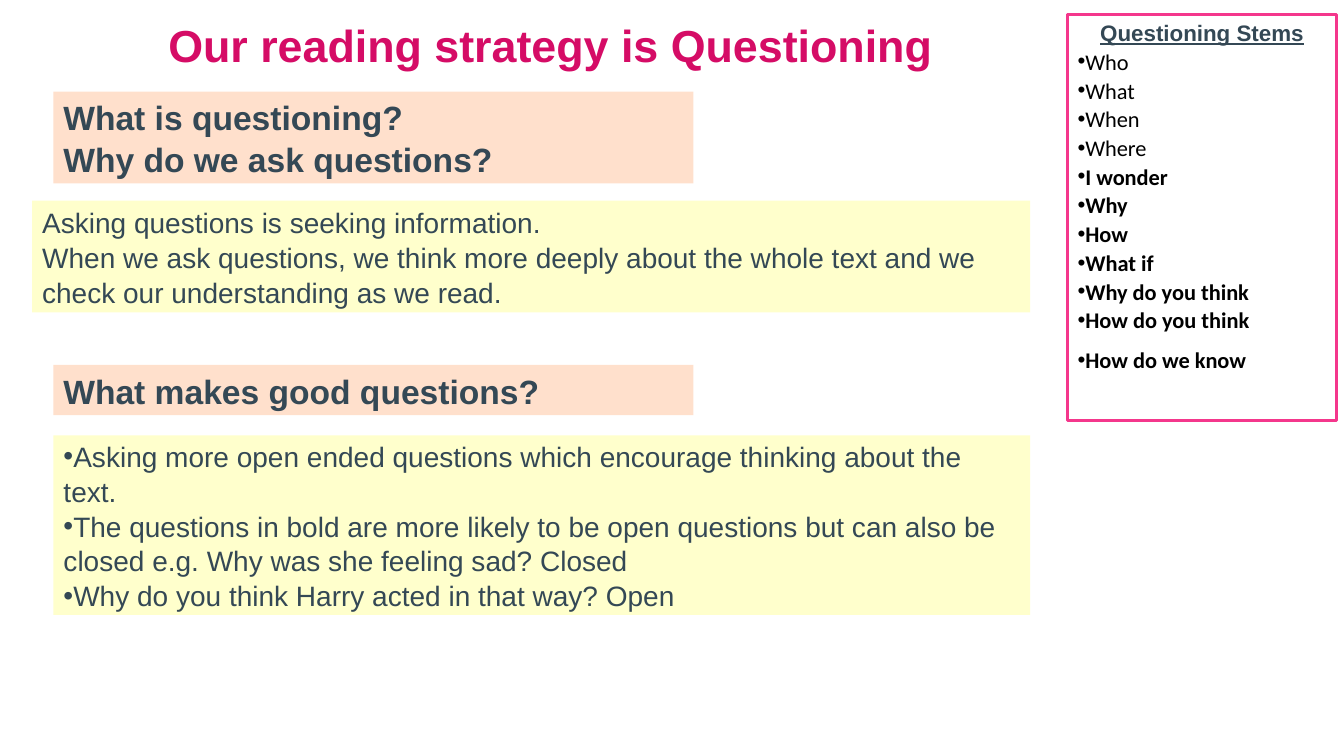
from dataclasses import dataclass

from lxml.etree import SubElement
from pptx import Presentation
from pptx.dml.color import RGBColor
from pptx.enum.shapes import MSO_SHAPE
from pptx.enum.text import MSO_ANCHOR, MSO_AUTO_SIZE, PP_ALIGN
from pptx.oxml.ns import qn
from pptx.util import Pt

MAGENTA = RGBColor(0xD5, 0x0C, 0x66)
PINK = RGBColor(0xF4, 0x37, 0x8C)
SLATE = RGBColor(0x34, 0x48, 0x55)
PEACH = RGBColor(0xFF, 0xE0, 0xCC)
CREAM = RGBColor(0xFF, 0xFF, 0xCC)
WHITE = RGBColor(0xFF, 0xFF, 0xFF)
BLACK = RGBColor(0, 0, 0)


@dataclass(frozen=True)
class Box:
    left: float
    top: float
    width: float
    height: float


@dataclass(frozen=True)
class TextStyle:
    size: float
    color: RGBColor
    bold: bool = False
    font_name: str = "Arial"
    alignment: PP_ALIGN = PP_ALIGN.LEFT
    line_spacing: float = 1.04
    bullet: bool = False
    underline: bool = False


@dataclass(frozen=True)
class Panel:
    box: Box
    fill: RGBColor
    style: TextStyle
    lines: tuple[str, ...]


TITLE = TextStyle(32, MAGENTA, bold=True, alignment=PP_ALIGN.CENTER, line_spacing=1)
QUESTION = TextStyle(24, SLATE, bold=True)
ANSWER = TextStyle(20, SLATE)
ADVICE = TextStyle(20, SLATE, bullet=True)
STEMS_HEADING = TextStyle(16, SLATE, bold=True, alignment=PP_ALIGN.CENTER,
                          line_spacing=1, underline=True)
CLOSED_STEM = TextStyle(16, BLACK, font_name="Calibri", line_spacing=1.07, bullet=True)
OPEN_STEM = TextStyle(16, BLACK, bold=True, font_name="Calibri",
                      line_spacing=1.07, bullet=True)

PANELS = (
    Panel(Box(38.16, 65.52, 457.2, 65.52), PEACH, QUESTION,
          ("What is questioning?", "Why do we ask questions?")),
    Panel(Box(38.16, 260.64, 457.2, 36), PEACH, QUESTION,
          ("What makes good questions?",)),
    Panel(Box(23.04, 143.28, 712.8, 79.92), CREAM, ANSWER,
          ("Asking questions is seeking information.",
           "When we ask questions, we think more deeply about the whole text "
           "and we check our understanding as we read.")),
)
ADVICE_PANEL = Panel(
    Box(38.16, 311.04, 697.68, 128.16), CREAM, ADVICE,
    ("Asking more open ended questions which encourage thinking about the text.",
     "The questions in bold are more likely to be open questions but can also be "
     "closed e.g. Why was she feeling sad? Closed",
     "Why do you think Harry acted in that way? Open"))
CLOSED_STEMS = ("Who", "What", "When", "Where")
OPEN_STEMS = ("I wonder", "Why", "How", "What if", "Why do you think",
              "How do you think", "How do we know")


def place(shape, box: Box, anchor: MSO_ANCHOR) -> None:
    shape.left, shape.top = Pt(box.left), Pt(box.top)
    shape.width, shape.height = Pt(box.width), Pt(box.height)
    frame = shape.text_frame
    frame.word_wrap = True
    frame.auto_size = MSO_AUTO_SIZE.NONE
    frame.vertical_anchor = anchor


def paint(shape, color: RGBColor) -> None:
    shape.fill.solid()
    shape.fill.fore_color.rgb = color


def write(shape, lines: list[tuple[str, TextStyle]]) -> None:
    frame = shape.text_frame
    for index, (text, style) in enumerate(lines):
        paragraph = frame.paragraphs[0] if index == 0 else frame.add_paragraph()
        paragraph.text = text
        paragraph.alignment = style.alignment
        paragraph.line_spacing = style.line_spacing
        paragraph.space_before = paragraph.space_after = Pt(0)
        properties = paragraph._p.get_or_add_pPr()
        properties.set("marL", "0")
        properties.set("indent", "0")
        if style.bullet:
            SubElement(properties, qn("a:buFont"), typeface="Arial")
            SubElement(properties, qn("a:buChar"), char="•")
        else:
            SubElement(properties, qn("a:buNone"))
        font = paragraph.font
        font.name = style.font_name
        font.size = Pt(style.size)
        font.bold = style.bold
        font.underline = style.underline
        font.color.rgb = style.color


def fill_panel(shape, panel: Panel) -> None:
    place(shape, panel.box, MSO_ANCHOR.MIDDLE)
    paint(shape, panel.fill)
    write(shape, [(line, panel.style) for line in panel.lines])


def main() -> None:
    presentation = Presentation()
    presentation.slide_width, presentation.slide_height = Pt(960), Pt(540)
    slide = presentation.slides.add_slide(
        presentation.slide_layouts.get_by_name("Two Content"))
    title, stems, advice = slide.placeholders

    place(title, Box(38.16, 10, 710.64, 43), MSO_ANCHOR.MIDDLE)
    write(title, [("Our reading strategy is Questioning", TITLE)])

    place(stems, Box(762.48, 10.08, 192.24, 290.16), MSO_ANCHOR.TOP)
    paint(stems, WHITE)
    stems.line.color.rgb = PINK
    stems.line.width = Pt(2)
    write(stems, [("Questioning Stems", STEMS_HEADING)]
          + [(stem, CLOSED_STEM) for stem in CLOSED_STEMS]
          + [(stem, OPEN_STEM) for stem in OPEN_STEMS])
    for paragraph in stems.text_frame.paragraphs[-2:]:
        paragraph.space_after = Pt(8)

    fill_panel(advice, ADVICE_PANEL)
    for panel in PANELS:
        shape = slide.shapes.add_shape(MSO_SHAPE.RECTANGLE, 0, 0, 0, 0)
        shape.shadow.inherit = False
        shape.line.fill.background()
        fill_panel(shape, panel)

    presentation.save("out.pptx")


if __name__ == "__main__":
    main()
